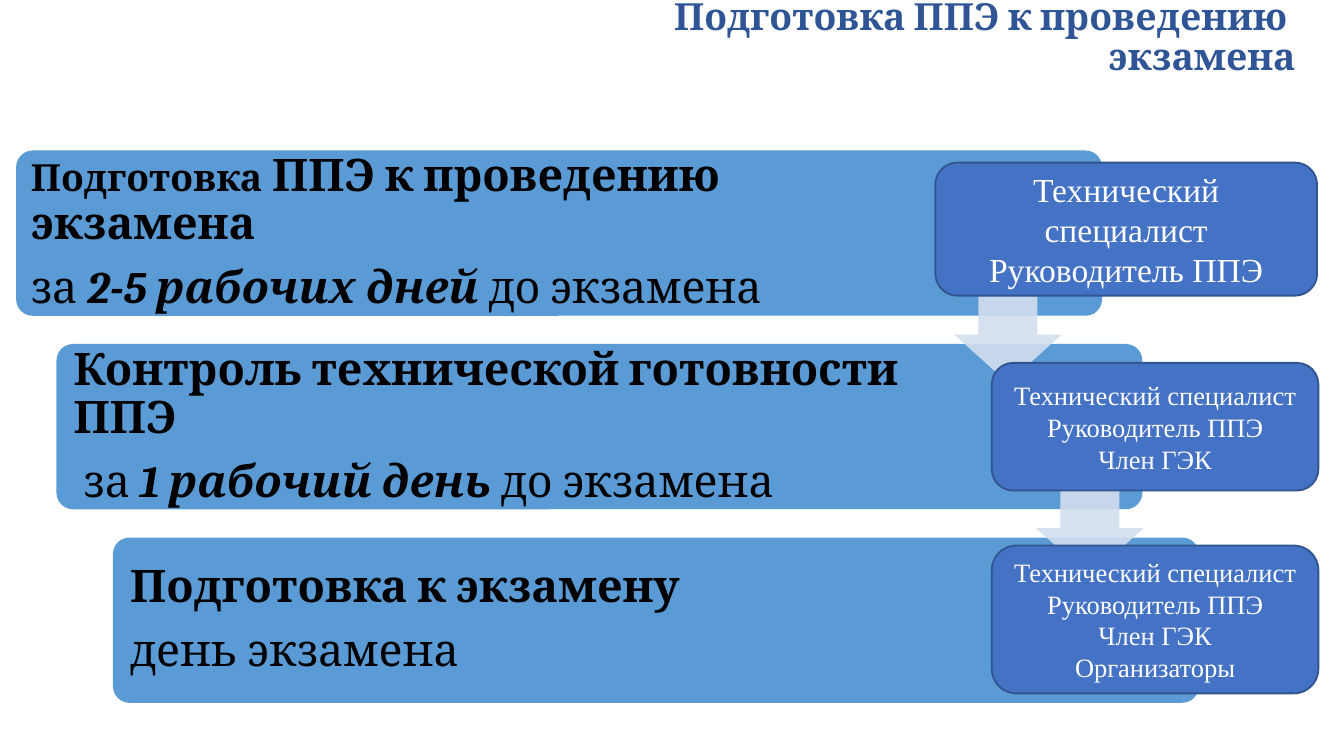
import pptx
import pptx.util
import pptx.dml.color
import pptx.enum.shapes
import pptx.enum.text
import pptx.oxml.ns
from lxml import etree

Inch = pptx.util.Inches
Pt = pptx.util.Pt
Kind = pptx.enum.shapes.MSO_SHAPE
Align = pptx.enum.text.PP_ALIGN
Mid = pptx.enum.text.MSO_ANCHOR.MIDDLE

COLORS = {"title": "2F5597", "bar": "5B9BD5", "arrow": "D2DEEF",
          "box": "4472C4", "edge": "325491", "ink": "000000", "light": "FFFFFF"}
SERIF, ROMAN = "Cambria", "Times New Roman"
TITLE = "Подготовка ППЭ к проведению \vэкзамена"

# runs: text, size, bold, italic
STEPS = [
    {"left": 0.12, "width": 6.75, "inset": 0.08, "text": [
        [("Подготовка", 20, True, False), (" ППЭ к проведению экзамена", 24, True, False)],
        [("за ", 24, False, False), ("2-5 рабочих дней ", 24, True, True),
         ("до экзамена", 24, False, False)]]},
    {"left": 0.42, "width": 6.5, "inset": 0.1, "text": [
        [("Контроль технической готовности ППЭ", 24, True, False)],
        [(" за ", 24, False, False), ("1 рабочий день ", 24, True, True),
         ("до экзамена", 24, False, False)]]},
    {"left": 0.84, "width": 6.5, "inset": 0.1, "text": [
        [("Подготовка к экзамену", 24, True, False)],
        [("день экзамена", 24, False, False)]]},
]
PAIR = "Технический специалист\vРуководитель ППЭ"
ROLES = [
    ((6.96, 1.21, 2.84, 0.99), 18, [PAIR]),
    ((7.38, 2.7, 2.43, 0.95), 14.2, [PAIR, "Член ГЭК"]),
    ((7.38, 4.06, 2.43, 1.1), 14.2, [PAIR, "Член ГЭК", "Организаторы"]),
]
ARROWS = [7.1, 7.71]
TOP, PITCH, WIDE, HIGH = 1.12, 1.44, 8.08, 1.23
PAD = 0.03


def rgb(name):
    return pptx.dml.color.RGBColor.from_string(COLORS[name])


def style(font, face, size, color, bold=False, italic=False):
    font.name, font.size = face, Pt(size)
    font.bold, font.italic = bold, italic
    font.color.rgb = rgb(color)


def frame(shape, side, edge):
    text = shape.text_frame
    text.word_wrap = True
    text.auto_size = pptx.enum.text.MSO_AUTO_SIZE.NONE
    text.vertical_anchor = Mid
    text.margin_left = text.margin_right = Inch(side)
    text.margin_top = text.margin_bottom = Inch(edge)
    return text


def draw(kind, area, fill, line=None):
    shape = slide.shapes.add_shape(kind, *map(Inch, area))
    shape.shadow.inherit = False
    shape.fill.solid()
    shape.fill.fore_color.rgb = rgb(fill)
    if line:
        shape.line.color.rgb = rgb(line)
        shape.line.width = Pt(1)
    else:
        shape.line.fill.background()
    return shape


deck = pptx.Presentation()
deck.slide_width, deck.slide_height = Pt(720), Pt(405)
slide = deck.slides.add_slide(deck.slide_layouts[5])

title = slide.shapes.title
title.left, title.top, title.width, title.height = map(Inch, (0.99, -0.08, 8.74, 0.73))
text = frame(title, 0.09, 0.04)
text.text = TITLE
para = text.paragraphs[0]
para.alignment, para.line_spacing = Align.RIGHT, 0.9
for run in para.runs:
    style(run.font, SERIF, 20, "title", True)

for row, step in enumerate(STEPS):
    top = TOP + row * PITCH
    bar = draw(Kind.ROUNDED_RECTANGLE, (step["left"], top, WIDE, HIGH), "bar")
    bar.adjustments[0] = 0.1
    area = (step["left"] + PAD, top + PAD, step["width"], HIGH - 2 * PAD)
    label = slide.shapes.add_textbox(*map(Inch, area))
    text = frame(label, step["inset"], step["inset"])
    for n, parts in enumerate(step["text"]):
        para = text.add_paragraph() if n else text.paragraphs[0]
        para.line_spacing, para.space_after = 0.9, Pt(8.4)
        for words, size, bold, italic in parts:
            run = para.add_run()
            run.text = words
            style(run.font, SERIF, size, "ink", bold, italic)

for row, left in enumerate(ARROWS):
    arrow = draw(Kind.DOWN_ARROW, (left, 2.05 + row * PITCH, 0.8, 0.8), "arrow")
    arrow.adjustments[0], arrow.adjustments[1] = 0.55, 0.45
    tint = arrow.element.find(".//" + pptx.oxml.ns.qn("a:srgbClr"))
    etree.SubElement(tint, pptx.oxml.ns.qn("a:alpha"), val="90000")

for area, size, lines in ROLES:
    box = draw(Kind.ROUNDED_RECTANGLE, area, "box", "edge")
    text = frame(box, 0.09, 0.04)
    text.text = "\n".join(lines)
    for para in text.paragraphs:
        para.alignment = Align.CENTER
        for run in para.runs:
            style(run.font, ROMAN, size, "light")

deck.save("out.pptx")
